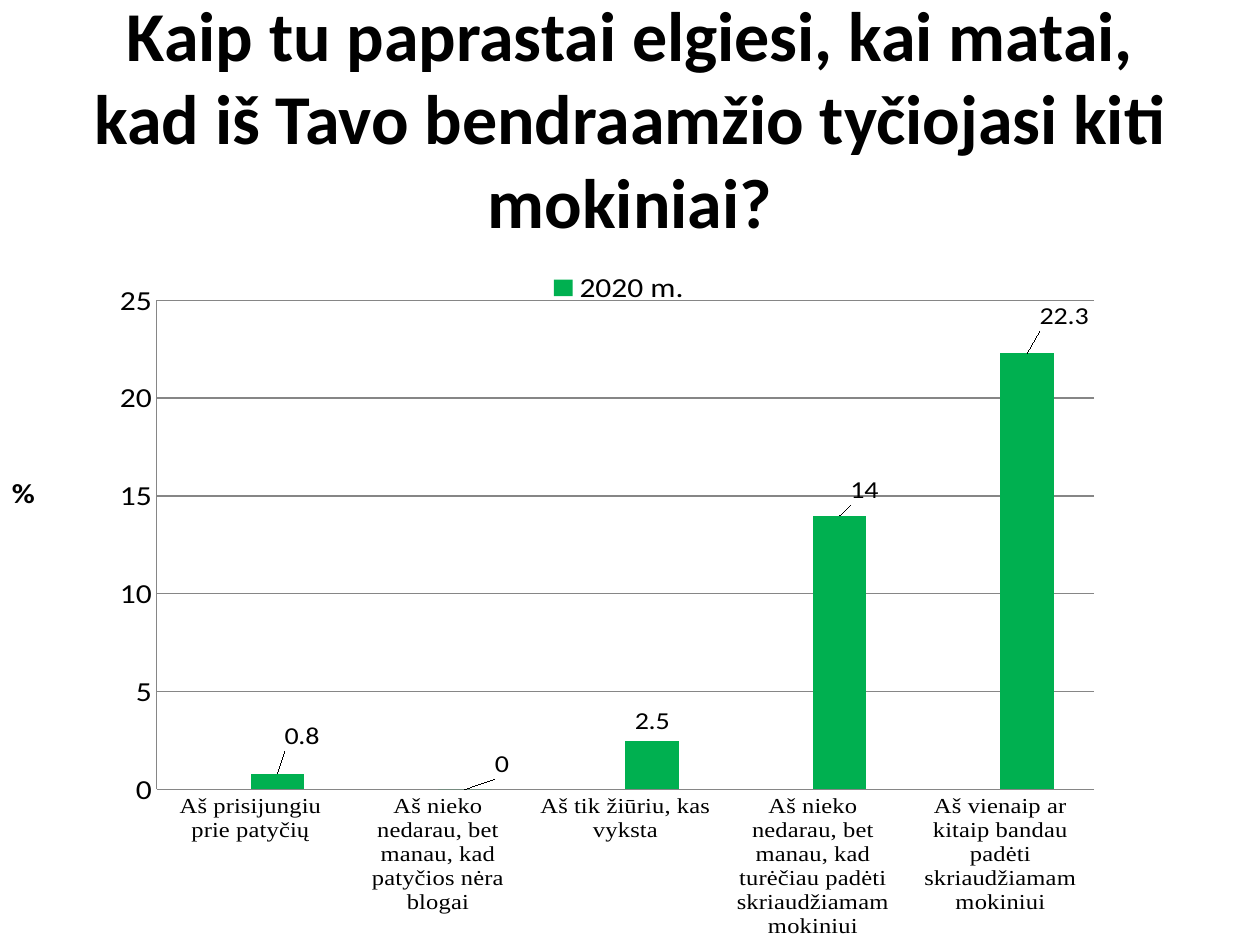
from lxml import etree
from pptx import Presentation
from pptx import util as u
from pptx.chart.data import CategoryChartData
from pptx.dml.color import RGBColor
from pptx.enum import chart as charts, text
from pptx.oxml.ns import qn

PX = 914400 // 126
COLORS = {"text": "000000", "empty": "85FFBC", "answers": "00B050", "grid": "868686"}


def color(name):
    return RGBColor.from_string(COLORS[name])


def manual_layout(**values):
    """Return a c:layout element; values follow the schema order."""
    layout = etree.Element(qn("c:layout"))
    manual = etree.SubElement(layout, qn("c:manualLayout"))
    for tag, value in values.items():
        etree.SubElement(manual, qn(f"c:{tag}")).set("val", str(value))
    return layout


deck = Presentation()
deck.slide_width, deck.slide_height = 1260 * PX, 945 * PX
page = deck.slides.add_slide(deck.slide_layouts[5])

title = page.shapes.title
title.left, title.top, title.width, title.height = [n * PX for n in (63, 38, 1134, 158)]
frame = title.text_frame
frame.text = "Kaip tu paprastai elgiesi, kai matai, kad iš Tavo bendraamžio tyčiojasi kiti mokiniai?"
frame.word_wrap = True
frame.auto_size = text.MSO_AUTO_SIZE.NONE
frame.vertical_anchor = text.MSO_ANCHOR.MIDDLE
para = frame.paragraphs[0]
para.alignment = text.PP_ALIGN.CENTER
para.font.name, para.font.size, para.font.bold = "Calibri", u.Pt(40), True
para.font.color.rgb = color("text")

answers = {
    "Aš prisijungiu prie patyčių": 0.8,
    "Aš nieko nedarau, bet manau, kad patyčios nėra blogai": 0,
    "Aš tik žiūriu, kas vyksta": 2.5,
    "Aš nieko nedarau, bet manau, kad turėčiau padėti skriaudžiamam mokiniui": 14,
    "Aš vienaip ar kitaip bandau padėti skriaudžiamam mokiniui": 22.3,
}
data = CategoryChartData()
data.categories = list(answers)
data.add_series("Series 1", [None] * len(answers))
data.add_series("2020 m.", list(answers.values()))
chart = page.shapes.add_chart(
    charts.XL_CHART_TYPE.COLUMN_CLUSTERED, 0, 254 * PX, 1235 * PX, 684 * PX, data).chart
chart.has_title = False
chart.font.name, chart.font.size = "Calibri", u.Pt(18)
chart.font.color.rgb = color("text")

plot_area = chart.plots[0]._element.getparent()
for old in plot_area.findall(qn("c:layout")):
    plot_area.remove(old)
plot_area.insert(0, manual_layout(
    layoutTarget="inner", xMode="edge", yMode="edge", x=0.127, y=0.078, w=0.759, h=0.821))

plot = chart.plots[0]
plot.gap_width, plot.overlap, plot.vary_by_categories = 150, 0, False
for series, name in zip(plot.series, ("empty", "answers")):
    series.format.fill.solid()
    series.format.fill.fore_color.rgb = color(name)
    series.invert_if_negative = False
    labels = series.data_labels
    labels.show_value = True
    labels.font.size = u.Pt(16)
    labels.position = charts.XL_LABEL_POSITION.OUTSIDE_END

# Labels nudged away from their bars, as fractions of the chart
nudges = {0: (0.02, -0.03), 1: (0.03, -0.01), 3: (0.02, -0.01), 4: (0.03, -0.03)}
for index, (dx, dy) in nudges.items():
    label = plot.series[1].points[index].data_label
    label.font.size = u.Pt(16)
    label.position = charts.XL_LABEL_POSITION.OUTSIDE_END
for entry in plot.series[1]._element.iter(qn("c:dLbl")):
    index_tag = entry.find(qn("c:idx"))
    dx, dy = nudges[int(index_tag.get("val"))]
    index_tag.addnext(manual_layout(x=dx, y=dy))

categories, values = chart.category_axis, chart.value_axis
for axis in (categories, values):
    axis.major_tick_mark = axis.minor_tick_mark = charts.XL_TICK_MARK.NONE
    axis.format.line.color.rgb = color("grid")
categories.tick_labels.font.name = "Times New Roman"
categories.tick_labels.font.size = u.Pt(14)
values.minimum_scale, values.maximum_scale, values.major_unit = 0, 25, 5
values.has_major_gridlines = True
values.major_gridlines.format.line.color.rgb = color("grid")

unit = values.axis_title
unit.text_frame.text = "%"
unit_font = unit.text_frame.paragraphs[0].font
unit_font.size, unit_font.bold = u.Pt(18), True
body = unit._element.find(".//" + qn("a:bodyPr"))
body.set("rot", "0")
body.set("vert", "horz")
for old in unit._element.findall(qn("c:layout")):
    unit._element.remove(old)
unit._element.find(qn("c:tx")).addnext(
    manual_layout(xMode="edge", yMode="edge", x=0.005, y=0.36))

chart.has_legend = True
legend = chart.legend
legend.position = charts.XL_LEGEND_POSITION.TOP
legend.include_in_layout = False
legend.font.size = u.Pt(18)
for old in legend._element.findall(qn("c:layout")):
    legend._element.remove(old)
hidden = etree.Element(qn("c:legendEntry"))
etree.SubElement(hidden, qn("c:idx")).set("val", "0")
etree.SubElement(hidden, qn("c:delete")).set("val", "1")
legend._element.find(qn("c:legendPos")).addnext(hidden)
hidden.addnext(manual_layout(xMode="edge", yMode="edge", x=0.44, y=0.02))

deck.save("out.pptx")
